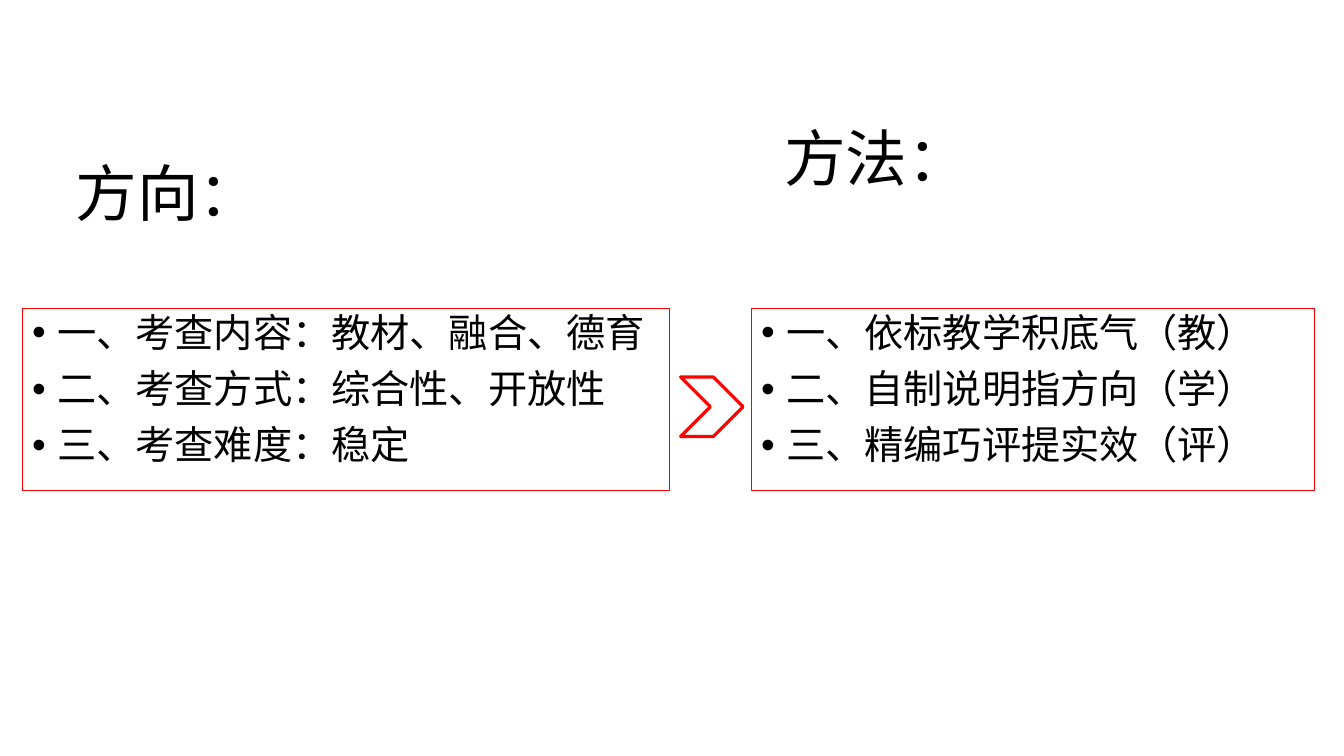
from lxml import etree
from pptx import Presentation
from pptx.dml.color import RGBColor as Rgb
from pptx.enum.shapes import MSO_SHAPE as Kind
from pptx.enum.text import MSO_ANCHOR as Anchor, PP_ALIGN as Align
from pptx.oxml.ns import qn
from pptx.util import Inches, Pt

HUES = {"text": "000000", "edge": "FF0000", "back": "FFFFFF"}

deck = Presentation()
deck.slide_width, deck.slide_height = Inches(13.33), Inches(7.5)
slide = deck.slides.add_slide(deck.slide_layouts[6])


def write(shape, lines, size, anchor, gap=0, dots=False):
    frame = shape.text_frame
    frame.word_wrap = True
    frame.vertical_anchor = anchor
    frame.text = "\n".join(lines)
    look = {"name": "Calibri", "size": Pt(size)}
    flow = {"alignment": Align.LEFT, "line_spacing": 0.9, "space_before": Pt(gap)}
    for para in frame.paragraphs:
        for key, value in flow.items():
            setattr(para, key, value)
        font = para.runs[0].font
        for key, value in look.items():
            setattr(font, key, value)
        font.color.rgb = Rgb.from_string(HUES["text"])
        if dots:
            props = para._p.get_or_add_pPr()
            props.set("marL", str(Inches(0.25)))
            props.set("indent", str(Inches(-0.25)))
            etree.SubElement(props, qn("a:buFont")).set("typeface", "Arial")
            etree.SubElement(props, qn("a:buChar")).set("char", "•")


def outline(kind, box, width):
    shape = slide.shapes.add_shape(kind, *map(Inches, box))
    shape.shadow.inherit = False
    shape.line.color.rgb = Rgb.from_string(HUES["edge"])
    shape.line.width = Pt(width)
    return shape


heads = [
    ("方法：", 7.68, 2.99, Anchor.TOP),
    ("方向：", 0.65, 2.26, Anchor.MIDDLE),
]
for title, left, width, anchor in heads:
    box = slide.shapes.add_textbox(*map(Inches, (left, 1.22, width, 1.45)))
    write(box, [title], 44, anchor)

lists = [
    (7.45, 5.59, ["一、依标教学积底气（教）", "二、自制说明指方向（学）", "三、精编巧评提实效（评）"]),
    (0.22, 6.42, ["一、考查内容：教材、融合、德育", "二、考查方式：综合性、开放性", "三、考查难度：稳定"]),
]
for left, width, lines in lists:
    panel = outline(Kind.RECTANGLE, (left, 3.06, width, 1.81), 0.75)
    panel.fill.background()
    write(panel, lines, 28, Anchor.TOP, gap=10, dots=True)

arrow = outline(Kind.CHEVRON, (6.75, 3.74, 0.62, 0.59), 2.25)
arrow.fill.solid()
arrow.fill.fore_color.rgb = Rgb.from_string(HUES["back"])

deck.save("out.pptx")
